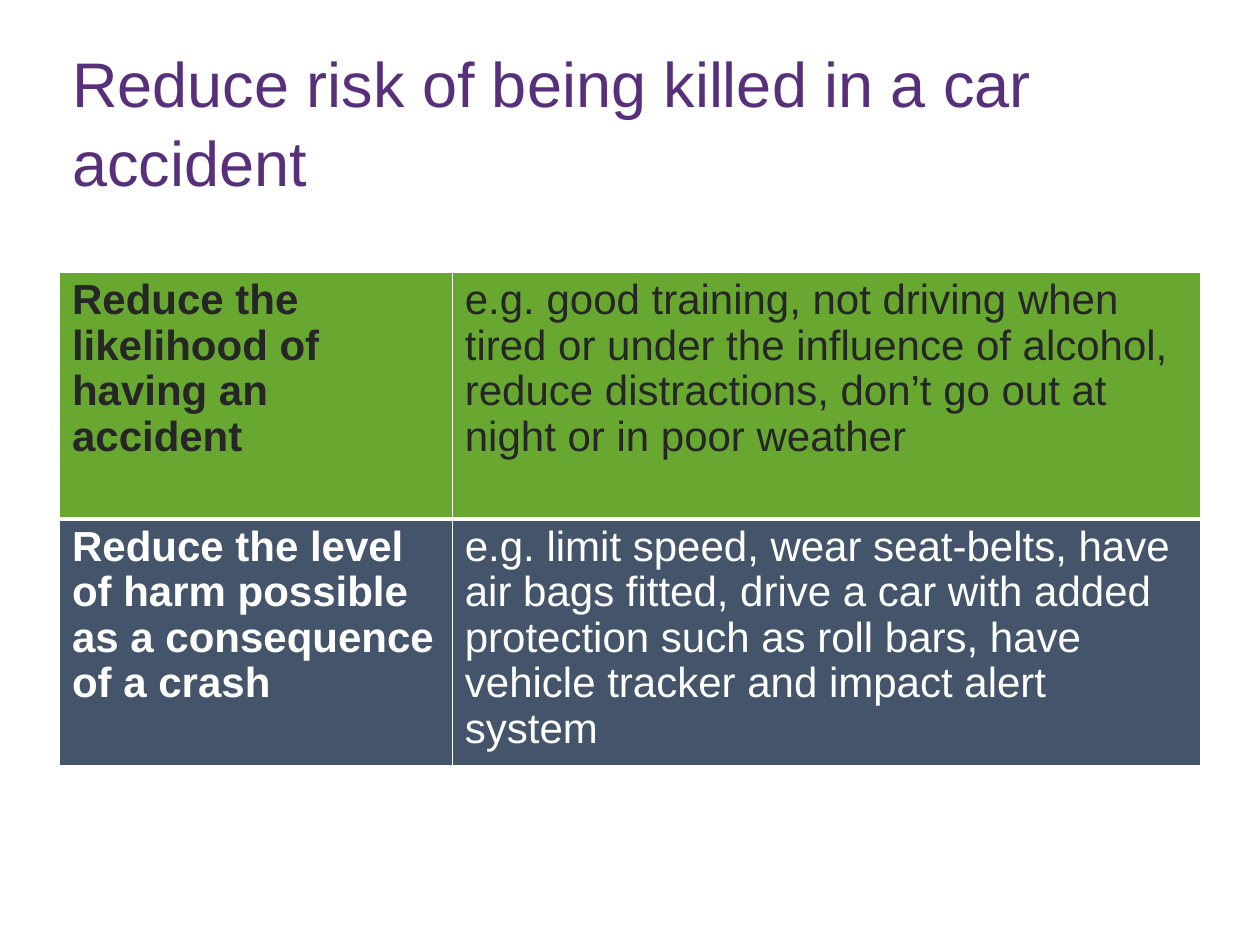
"""Build the slide on reducing the risk of being killed in a car accident."""
from lxml import etree
from pptx import Presentation
from pptx.dml.color import RGBColor
from pptx.enum.text import MSO_ANCHOR, MSO_AUTO_SIZE, PP_ALIGN
from pptx.oxml.ns import qn
from pptx.util import Pt

LEFT = PP_ALIGN.LEFT
MIDDLE = MSO_ANCHOR.MIDDLE
TOP = MSO_ANCHOR.TOP
FIXED = MSO_AUTO_SIZE.NONE

THEME = {
    "font": "Arial", "title": 36, "body": 24,
    "purple": "582F7A", "green": "69A830", "slate": "44546A",
    "dark": "262626", "white": "FFFFFF",
}


def write(frame, text, size, color, bold, space):
    para = frame.paragraphs[0]
    para.alignment = LEFT
    para.line_spacing = space
    run = para.add_run()
    run.text = text
    font = run.font
    font.name = THEME["font"]
    font.size = Pt(THEME[size])
    font.bold = bold
    font.color.rgb = RGBColor.from_string(THEME[color])


def border(cell, side, width):
    props = cell._tc.get_or_add_tcPr()
    line = etree.Element(qn(f"a:ln{side}"), w=str(Pt(width)))
    fill = etree.SubElement(line, qn("a:solidFill"))
    etree.SubElement(fill, qn("a:srgbClr"), val=THEME["white"])
    props.insert(len(props) - 1, line)


deck = Presentation()
deck.slide_width, deck.slide_height = Pt(720), Pt(540)
slide = deck.slides.add_slide(deck.slide_layouts[5])

left, width = 34, 652
title = slide.shapes.title
title.left, title.top = Pt(left), Pt(29)
title.width, title.height = Pt(width), Pt(79)
frame = title.text_frame
frame.word_wrap = True
frame.auto_size = FIXED
frame.vertical_anchor = MIDDLE
write(frame, "Reduce risk of being killed in a car accident",
      "title", "purple", False, 1.05)

rows = [
    ("green", "dark", "Reduce the likelihood of having an accident",
     "e.g. good training, not driving when tired or under the influence of "
     "alcohol, reduce distractions, don’t go out at night or in poor weather"),
    ("slate", "white",
     "Reduce the level of harm possible as a consequence of a crash",
     "e.g. limit speed, wear seat-belts, have air bags fitted, drive a car "
     "with added protection such as roll bars, have vehicle tracker and "
     "impact alert system"),
]
high = 141
table = slide.shapes.add_table(
    len(rows), 2, Pt(left), Pt(155.5), Pt(width), Pt(high * len(rows))).table
table.first_row = table.horz_banding = False
for col, wide in zip(table.columns, (224.5, 427.5)):
    col.width = Pt(wide)

for i, (fill, color, *texts) in enumerate(rows):
    table.rows[i].height = Pt(high)
    for j, text in enumerate(texts):
        cell = table.cell(i, j)
        cell.vertical_anchor = TOP
        cell.fill.solid()
        cell.fill.fore_color.rgb = RGBColor.from_string(THEME[fill])
        sides = {"L": 1, "R": 1, "T": 3 if i else 1, "B": 1 if i else 3}
        for side, thick in sides.items():
            border(cell, side, thick)
        write(cell.text_frame, text, "body", color, j == 0, 0.97)

deck.save("out.pptx")
